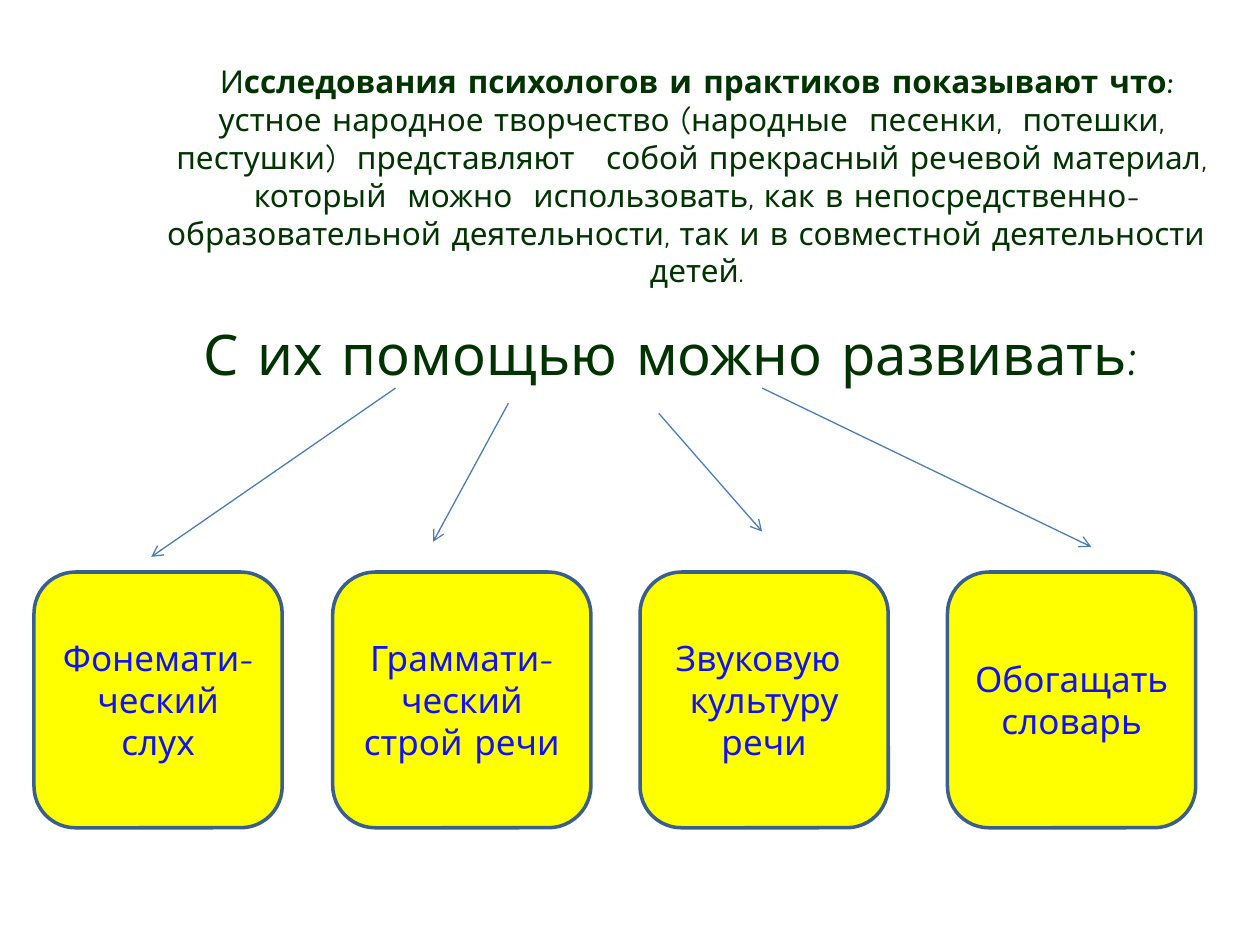
from lxml import etree
from pptx import Presentation
from pptx import util as u
from pptx.dml.color import RGBColor
from pptx.enum import shapes, text
from pptx.oxml import ns

WIDTH, HEIGHT = 10, 7.5
FONT = "Comic Neue"
GREEN, BLUE, YELLOW = "003300", "1111F3", "FFFF00"
BORDER, ARROW = "3A5F8C", "4A7EBB"
INTRO = [
    [("И", False), ("сследования психологов и практиков показывают что:", True)],
    [("устное народное творчество (народные  песенки,  потешки,  пестушки)  "
      "представляют   собой прекрасный речевой материал,  который  можно  "
      "использовать, как в непосредственно-образовательной деятельности, "
      "так и в совместной деятельности   детей.", False)],
]
HEADING = [[("С их помощью можно развивать:", False), (" ", False)]]
SKILLS = [
    (0, 1.97, "Фонемати-ческий слух"),
    (2.37, 2.05, "Граммати-ческий строй речи"),
    (4.81, 1.97, "Звуковую  культуру речи"),
    (7.25, 1.97, "Обогащать словарь"),
]
ARROWS = [
    ((0.26, 0), (0, 1)),
    ((0.38, 0.09), (0.3, 0.91)),
    ((0.65, 0), (1, 0.94)),
    ((0.54, 0.15), (0.65, 0.85)),
]


def color(value):
    """Turn a hex string into a colour."""
    return RGBColor.from_string(value)


def inches(*values):
    """Turn numbers into lengths in inches."""
    return [u.Inches(value) for value in values]


def write(shape, paragraphs, size, fill, anchor=text.MSO_ANCHOR.MIDDLE):
    """Fill a shape with centred paragraphs of (words, bold) runs."""
    frame = shape.text_frame
    frame.word_wrap = True
    frame.vertical_anchor = anchor
    for index, runs in enumerate(paragraphs):
        paragraph = frame.paragraphs[0] if index == 0 else frame.add_paragraph()
        paragraph.alignment = text.PP_ALIGN.CENTER
        for words, bold in runs:
            run = paragraph.add_run()
            run.text = words
            run.font.name = FONT
            run.font.size = u.Pt(size)
            run.font.bold = bold
            run.font.color.rgb = color(fill)


def add_text(slide, box, paragraphs, size, **options):
    """Place a green text block in the given box."""
    write(slide.shapes.add_textbox(*inches(*box)), paragraphs, size, GREEN, **options)


def add_skills(slide, box):
    """Place the row of yellow tiles in the given box."""
    left, top, _, height = box
    for offset, width, words in SKILLS:
        tile = slide.shapes.add_shape(
            shapes.MSO_SHAPE.ROUNDED_RECTANGLE, *inches(left + offset, top, width, height))
        tile.shadow.inherit = False
        tile.fill.solid()
        tile.fill.fore_color.rgb = color(YELLOW)
        tile.line.color.rgb = color(BORDER)
        tile.line.width = u.Pt(2)
        write(tile, [[(words, False)]], 20, BLUE)


def add_arrows(slide, box):
    """Place the arrows from the heading to the tiles in the given box."""
    left, top, width, height = box
    for ends in ARROWS:
        points = [value for x, y in ends for value in (left + x * width, top + y * height)]
        arrow = slide.shapes.add_connector(shapes.MSO_CONNECTOR.STRAIGHT, *inches(*points))
        arrow.line.color.rgb = color(ARROW)
        arrow.line.width = u.Pt(0.75)
        line = arrow.line._get_or_add_ln()
        etree.SubElement(line, ns.qn("a:tailEnd"), type="arrow")
        etree.SubElement(arrow._element.spPr, ns.qn("a:effectLst"))


def main():
    """Build the slide and save it."""
    presentation = Presentation()
    presentation.slide_width, presentation.slide_height = inches(WIDTH, HEIGHT)
    slide = presentation.slides.add_slide(presentation.slide_layouts[6])
    add_text(slide, (1.22, 0.27, 8.62, 2.25), INTRO, 18)
    add_text(slide, (1.14, 2.49, 8.51, 0.63), HEADING, 32, anchor=text.MSO_ANCHOR.TOP)
    add_skills(slide, (0.27, 4.54, 9.22, 2.03))
    add_arrows(slide, (1.2, 3.08, 7.46, 1.34))
    presentation.save("out.pptx")


if __name__ == "__main__":
    main()
